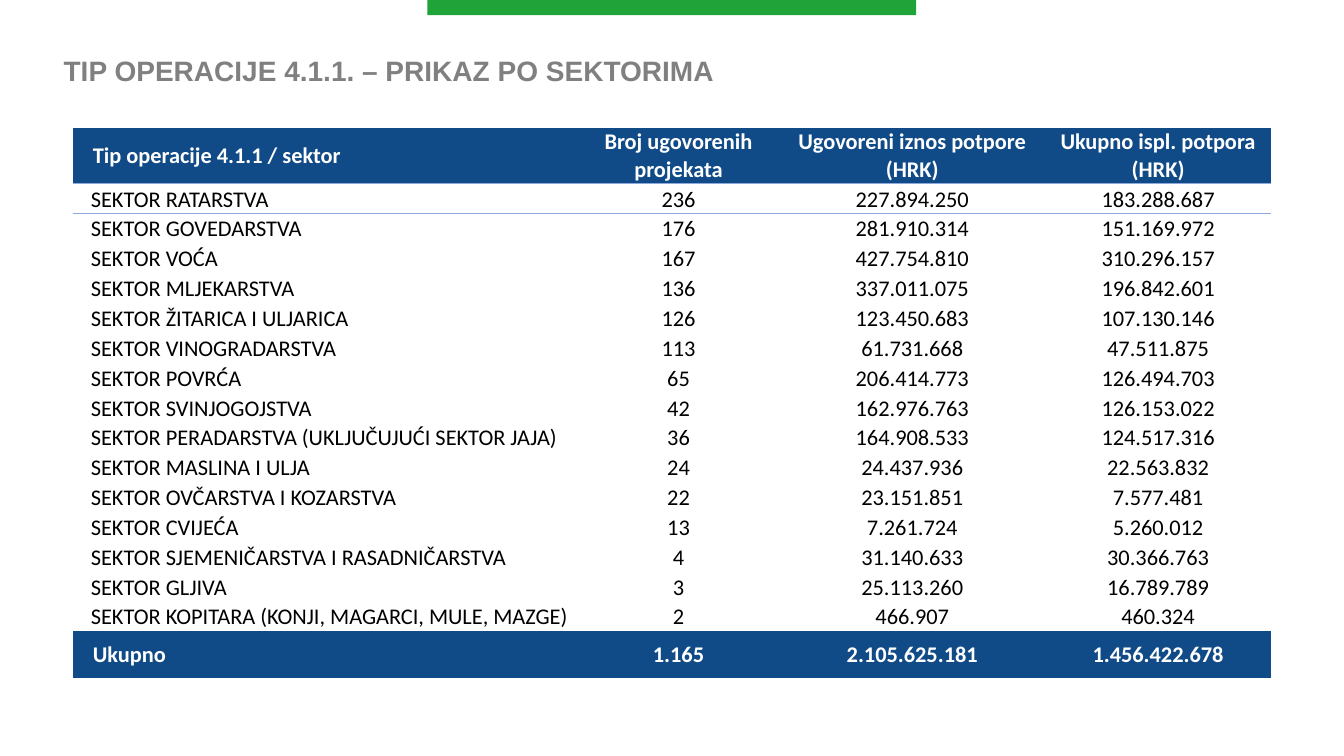
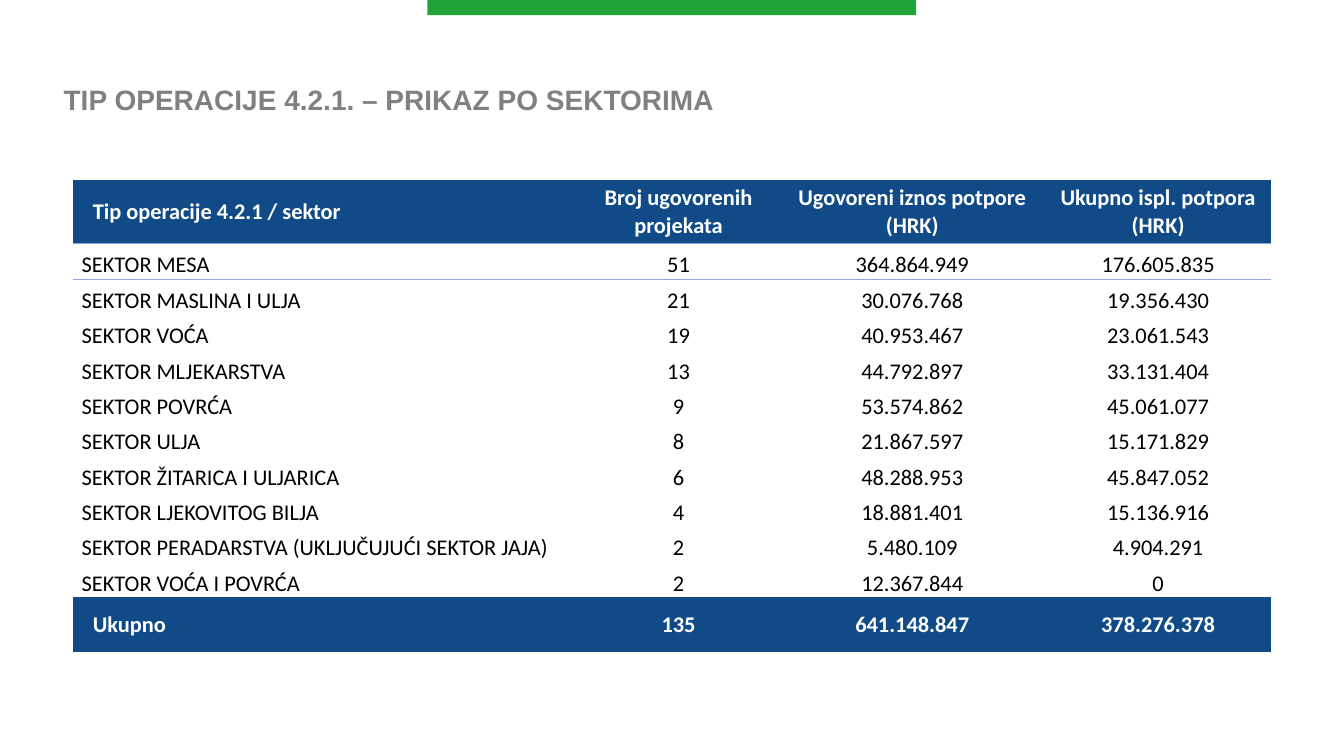
import dataclasses
import typing

import pptx
import pptx.dml.color
import pptx.enum.shapes
import pptx.enum.text
import pptx.oxml
import pptx.oxml.ns
import pptx.util

Cm = pptx.util.Cm
Pt = pptx.util.Pt
ALIGN = pptx.enum.text.PP_ALIGN
ANCHOR = pptx.enum.text.MSO_ANCHOR

# Shared look
GREEN, NAVY, RULE = "20A439", "114B87", "8EA9DB"
GREY, WHITE, BLACK = "808080", "FFFFFF", "000000"
TABLE_LEFT = 1.83
COL_WIDTHS = (12.73, 5.08, 6.7, 5.69)
LABEL_INDENT = 0.51
PLAIN_TABLE = "{2D5ABB26-0587-4C30-8999-92F81FD0307C}"


class Row(typing.NamedTuple):
    label: str
    projects: str
    agreed: str
    paid: str


@dataclasses.dataclass
class SectorSlide:
    operation: str
    title_top: float
    table_top: float
    table_height: float
    header_height: float
    total_height: float
    indent: float
    sectors: list[Row]
    total: Row


SLIDES = [
    SectorSlide("4.1.1", 1.22, 3.23, 13.85, 1.39, 1.18, 0.46, [
        Row("SEKTOR RATARSTVA", "236", "227.894.250", "183.288.687"),
        Row("SEKTOR GOVEDARSTVA", "176", "281.910.314", "151.169.972"),
        Row("SEKTOR VOĆA", "167", "427.754.810", "310.296.157"),
        Row("SEKTOR MLJEKARSTVA", "136", "337.011.075", "196.842.601"),
        Row("SEKTOR ŽITARICA I ULJARICA", "126", "123.450.683", "107.130.146"),
        Row("SEKTOR VINOGRADARSTVA", "113", "61.731.668", "47.511.875"),
        Row("SEKTOR POVRĆA", "65", "206.414.773", "126.494.703"),
        Row("SEKTOR SVINJOGOJSTVA", "42", "162.976.763", "126.153.022"),
        Row("SEKTOR PERADARSTVA (UKLJUČUJUĆI SEKTOR JAJA)", "36", "164.908.533", "124.517.316"),
        Row("SEKTOR MASLINA I ULJA", "24", "24.437.936", "22.563.832"),
        Row("SEKTOR OVČARSTVA I KOZARSTVA", "22", "23.151.851", "7.577.481"),
        Row("SEKTOR CVIJEĆA", "13", "7.261.724", "5.260.012"),
        Row("SEKTOR SJEMENIČARSTVA I RASADNIČARSTVA", "4", "31.140.633", "30.366.763"),
        Row("SEKTOR GLJIVA", "3", "25.113.260", "16.789.789"),
        Row("SEKTOR KOPITARA (KONJI, MAGARCI, MULE, MAZGE)", "2", "466.907", "460.324"),
    ], Row("Ukupno", "1.165", "2.105.625.181", "1.456.422.678")),
    SectorSlide("4.2.1", 1.94, 4.54, 11.9, 1.6, 1.39, 0.23, [
        Row("SEKTOR MESA", "51", "364.864.949", "176.605.835"),
        Row("SEKTOR MASLINA I ULJA", "21", "30.076.768", "19.356.430"),
        Row("SEKTOR VOĆA", "19", "40.953.467", "23.061.543"),
        Row("SEKTOR MLJEKARSTVA", "13", "44.792.897", "33.131.404"),
        Row("SEKTOR POVRĆA", "9", "53.574.862", "45.061.077"),
        Row("SEKTOR ULJA", "8", "21.867.597", "15.171.829"),
        Row("SEKTOR ŽITARICA I ULJARICA", "6", "48.288.953", "45.847.052"),
        Row("SEKTOR LJEKOVITOG BILJA", "4", "18.881.401", "15.136.916"),
        Row("SEKTOR PERADARSTVA (UKLJUČUJUĆI SEKTOR JAJA)", "2", "5.480.109", "4.904.291"),
        Row("SEKTOR VOĆA I POVRĆA", "2", "12.367.844", "0"),
    ], Row("Ukupno", "135", "641.148.847", "378.276.378")),
]


def rgb(value: str) -> pptx.dml.color.RGBColor:
    return pptx.dml.color.RGBColor.from_string(value)


def style_paragraph(p, font: str, size: float, color: str, bold: bool, align) -> None:
    p.alignment = align
    p.font.name = font
    p.font.size = Pt(size)
    p.font.bold = bold
    p.font.color.rgb = rgb(color)


def add_band(s, layout) -> None:
    """Draw the green top band and hand it to the layout, so every slide shows it."""
    sp = s.shapes.add_shape(pptx.enum.shapes.MSO_SHAPE.RECTANGLE,
                            Cm(10.77), Cm(0), Cm(12.32), Cm(0.38))
    sp.shadow.inherit = False
    sp.fill.solid()
    sp.fill.fore_color.rgb = rgb(GREEN)
    sp.line.fill.background()
    layout.shapes.element.append(sp.element)


def add_title(s, text: str, top: float) -> None:
    sp = s.shapes.title
    sp.left, sp.top, sp.width, sp.height = Cm(1.35), Cm(top), Cm(29.21), Cm(1.11)
    tf = sp.text_frame
    tf.text = text
    tf.word_wrap = True
    tf.auto_size = pptx.enum.text.MSO_AUTO_SIZE.NONE
    tf.vertical_anchor = ANCHOR.TOP
    style_paragraph(tf.paragraphs[0], "Arial", 20, GREY, True, ALIGN.LEFT)


def fill_cell(cell, text: str, strong: bool, indent: float, align) -> None:
    cell.margin_left = Cm(indent)
    cell.margin_right = cell.margin_top = cell.margin_bottom = 0
    cell.vertical_anchor = ANCHOR.MIDDLE if strong else ANCHOR.BOTTOM
    if strong:
        cell.fill.solid()
        cell.fill.fore_color.rgb = rgb(NAVY)
    else:
        cell.fill.background()
    cell.text = text
    style_paragraph(cell.text_frame.paragraphs[0], "Calibri", 16,
                    WHITE if strong else BLACK, strong, align)


def add_border(tc, side: str) -> None:
    line = pptx.oxml.parse_xml(
        f'<a:{side} {pptx.oxml.ns.nsdecls("a")} w="{Pt(0.5)}"><a:solidFill>'
        f'<a:srgbClr val="{RULE}"/></a:solidFill></a:{side}>')
    tc.get_or_add_tcPr().insert(0, line)


def add_sector_table(s, data: SectorSlide) -> None:
    header = Row(f"Tip operacije {data.operation} / sektor", "Broj ugovorenih projekata",
                 "Ugovoreni iznos potpore (HRK)", "Ukupno ispl. potpora (HRK)")
    rows = [header, *data.sectors, data.total]
    n_cols = len(COL_WIDTHS)
    frame = s.shapes.add_table(len(rows), n_cols, Cm(TABLE_LEFT), Cm(data.table_top),
                               Cm(sum(COL_WIDTHS)), Cm(data.table_height))
    table = frame.table
    table.horz_banding = False
    table.last_row = True
    for style in frame.element.iter(pptx.oxml.ns.qn("a:tableStyleId")):
        style.text = PLAIN_TABLE

    # Column widths and row heights; sectors share what header and total leave
    for col, width in zip(table.columns, COL_WIDTHS):
        col.width = Cm(width)
    shared = (data.table_height - data.header_height - data.total_height) / len(data.sectors)
    heights = [data.header_height, *[shared] * len(data.sectors), data.total_height]
    for i, (row, height) in enumerate(zip(rows, heights)):
        table.rows[i].height = Cm(height)
        strong = row in (header, data.total)
        for j, text in enumerate(row):
            indent = 0 if j else LABEL_INDENT if strong else data.indent
            fill_cell(table.cell(i, j), text, strong, indent,
                      ALIGN.CENTER if j else ALIGN.LEFT)

    # Thin rule between header and first sector
    cells = list(frame.element.iter(pptx.oxml.ns.qn("a:tc")))
    for tc in cells[:n_cols]:
        add_border(tc, "lnB")
    for tc in cells[n_cols:2 * n_cols]:
        add_border(tc, "lnT")


def main() -> None:
    prs = pptx.Presentation()
    prs.slide_width, prs.slide_height = Cm(33.87), Cm(19.05)
    layout = prs.slide_layouts[5]
    for i, data in enumerate(SLIDES):
        s = prs.slides.add_slide(layout)
        if i == 0:
            add_band(s, layout)
        add_title(s, f"TIP OPERACIJE {data.operation}. – PRIKAZ PO SEKTORIMA", data.title_top)
        add_sector_table(s, data)
    prs.save("out.pptx")


if __name__ == "__main__":
    main()
